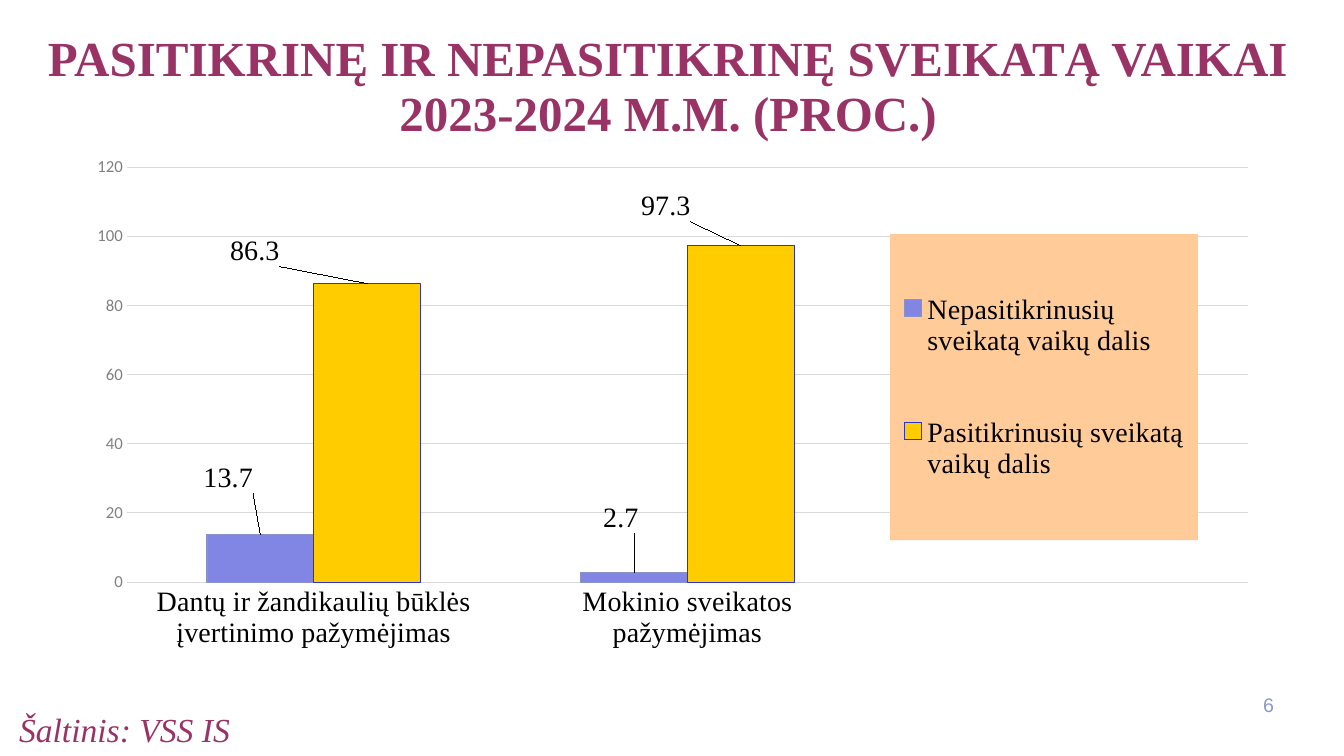
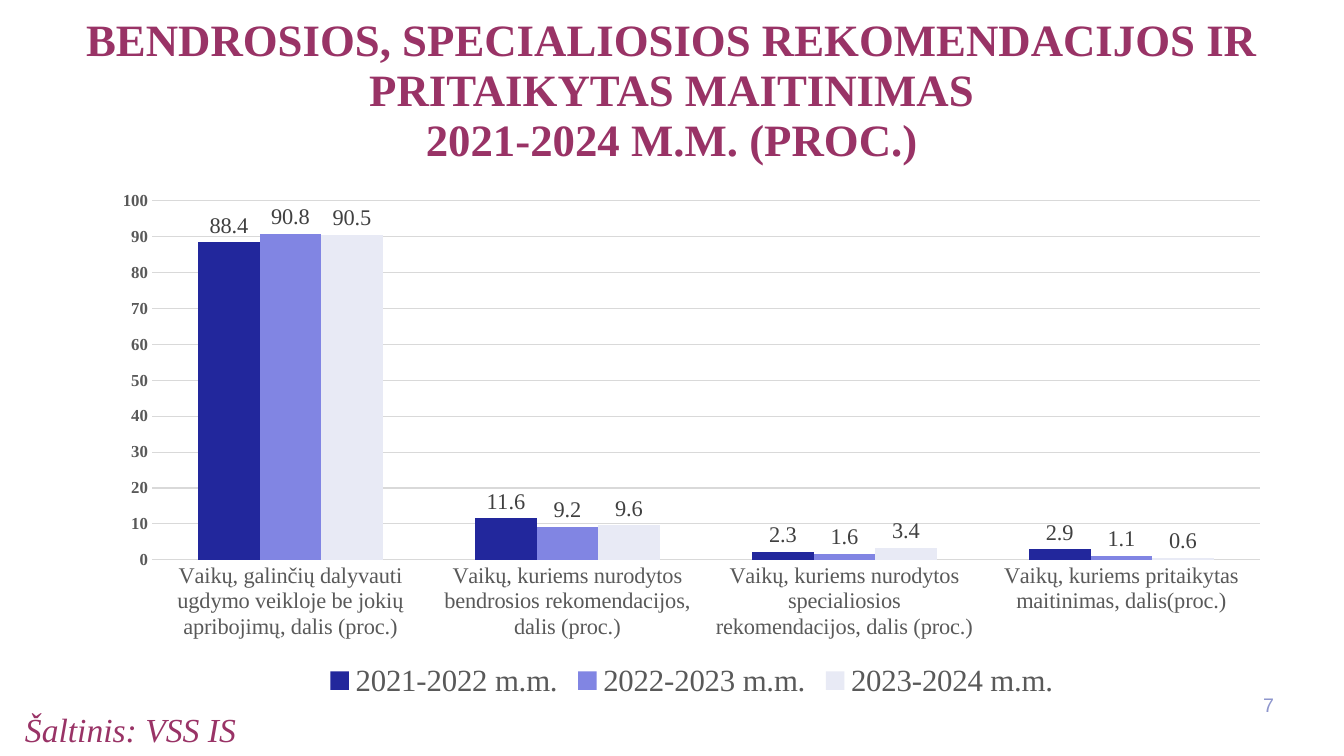
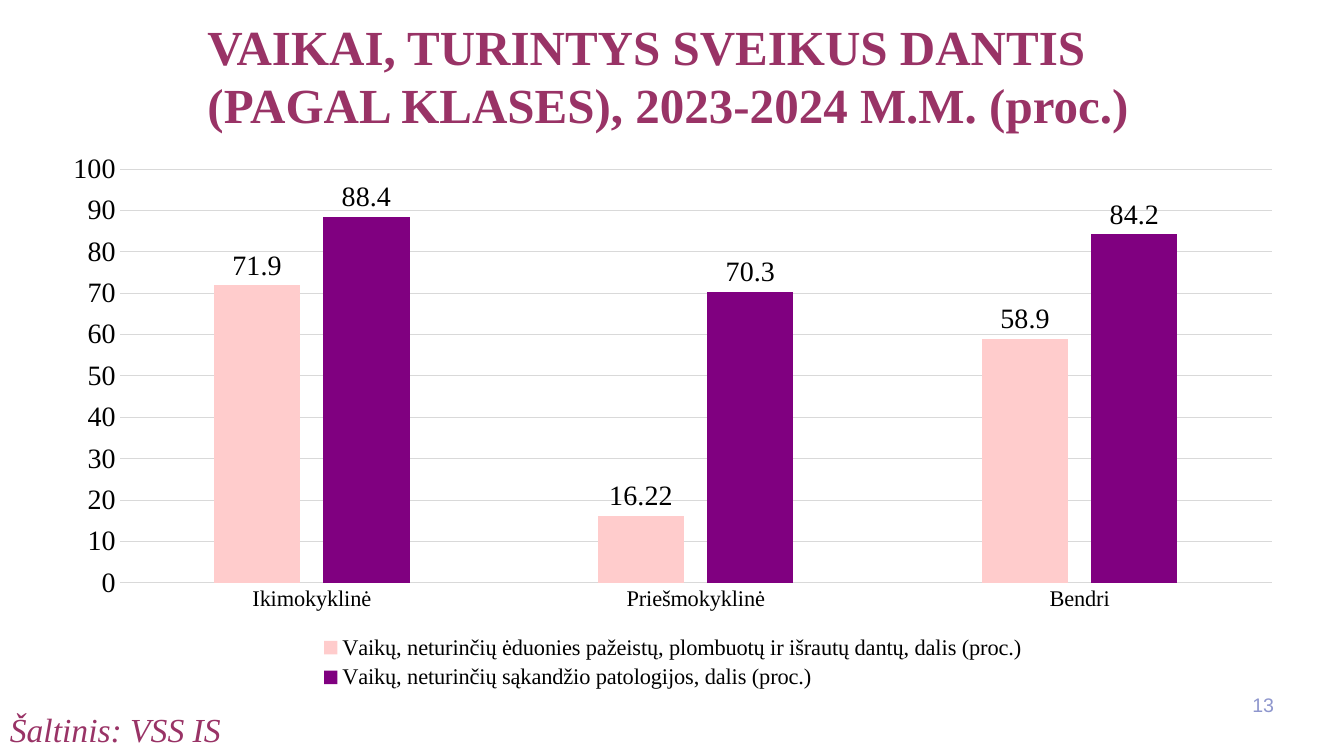
from dataclasses import dataclass

from pptx import Presentation
from pptx.chart.data import CategoryChartData
from pptx.dml.color import RGBColor
from pptx.enum.chart import XL_CHART_TYPE, XL_LABEL_POSITION, XL_LEGEND_POSITION, XL_TICK_MARK
from pptx.enum.text import MSO_ANCHOR, PP_ALIGN
from pptx.oxml import parse_xml
from pptx.oxml.ns import nsdecls
from pptx.util import Cm, Pt

COLUMN = XL_CHART_TYPE.COLUMN_CLUSTERED
OUTSIDE = XL_LABEL_POSITION.OUTSIDE_END
BOTTOM = XL_LEGEND_POSITION.BOTTOM
NO_TICK = XL_TICK_MARK.NONE
TOP, MIDDLE = MSO_ANCHOR.TOP, MSO_ANCHOR.MIDDLE
LEFT, CENTER, RIGHT = PP_ALIGN.LEFT, PP_ALIGN.CENTER, PP_ALIGN.RIGHT


@dataclass
class Theme:
    serif: str = "Times New Roman"
    sans: str = "Arial"
    plain: str = "Calibri"
    plum: str = "993366"
    number: str = "8E96CD"
    grid: str = "D9D9D9"
    black: str = "000000"
    dark: str = "404040"
    gray: str = "595959"
    pale: str = "808080"
    navy: str = "22279C"
    blue: str = "8185E3"
    mist: str = "E8EAF5"
    gold: str = "FFCC00"
    pink: str = "FFCCCC"
    purple: str = "800080"
    peach: str = "FFCC99"
    big: int = 35
    head: int = 32
    note: int = 24
    key: int = 22
    large: int = 20
    mid: int = 16
    page: int = 14
    small: int = 12


theme = Theme()


def style(font, size, color, name=theme.serif, bold=False, italic=False):
    font.size, font.name, font.bold, font.italic = Pt(size), name, bold, italic
    font.color.rgb = RGBColor.from_string(color)


def layout(frame, box, target=""):
    x, y, w, h = frame
    if len(box) == 2:
        parts = [("x", box[0] / w), ("y", box[1] / h)]
    else:
        parts = [("xMode", "edge"), ("yMode", "edge"),
                 ("x", (box[0] - x) / w), ("y", (box[1] - y) / h),
                 ("w", box[2] / w), ("h", box[3] / h)]
    if target:
        parts.insert(0, ("layoutTarget", target))
    body = "".join(f'<c:{tag} val="{val}"/>' for tag, val in parts)
    return parse_xml(f'<c:layout {nsdecls("c")}><c:manualLayout>{body}</c:manualLayout></c:layout>')


pages = [
    dict(
        title="PASITIKRINĘ IR NEPASITIKRINĘ SVEIKATĄ VAIKAI 2023-2024 M.M. (PROC.)",
        head=(-0.3, 0.71, 34.29, 3.51), size=theme.big, align=CENTER, pitch=0.93,
        note=(0.23, 17.73, 16, 0.97), page="6",
        frame=(1.83, 3.66, 30.23, 15.06), plot=(3.2, 4.21, 28.25, 10.46),
        cats=["Dantų ir žandikaulių būklės įvertinimo pažymėjimas",
              "Mokinio sveikatos pažymėjimas", ""],
        series=[("Nepasitikrinusių sveikatą vaikų dalis", [13.7, 2.7, None], theme.blue, "8A92C8"),
                ("Pasitikrinusių sveikatą vaikų dalis", [86.3, 97.3, None], theme.gold, "2D33CB")],
        top=120, step=20, gap=150, lap=0, base=None,
        cat=(theme.large, theme.black), val=(theme.small, theme.pale, theme.plain),
        label=(theme.large, theme.black), key=(theme.large, theme.black),
        panel=(22.43, 5.9, 7.76, 7.71),
        shifts=[[(-0.81, -0.93), (-0.33, -0.88)], [(-2.83, -0.33), (-1.89, -0.5)]],
    ),
    dict(
        title="BENDROSIOS, SPECIALIOSIOS REKOMENDACIJOS IR PRITAIKYTAS MAITINIMAS\v2021-2024 M.M. (PROC.)",
        head=(-0.28, 0.28, 34.42, 3.51), size=theme.head, align=CENTER, pitch=0.93,
        note=(0.38, 17.73, 16, 0.97), page="7",
        frame=(2.51, 4.57, 29.85, 13.16), plot=(3.83, 5.06, 27.92, 9.05),
        cats=["Vaikų, galinčių dalyvauti ugdymo veikloje be jokių apribojimų, dalis (proc.)",
              "Vaikų, kuriems nurodytos bendrosios rekomendacijos, dalis (proc.)",
              "Vaikų, kuriems nurodytos specialiosios rekomendacijos, dalis (proc.)",
              "Vaikų, kuriems pritaikytas maitinimas, dalis(proc.)"],
        series=[("2021-2022 m.m.", [88.4, 11.6, 2.3, 2.9], theme.navy, None),
                ("2022-2023 m.m.", [90.8, 9.2, 1.6, 1.1], theme.blue, None),
                ("2023-2024 m.m.", [90.5, 9.6, 3.4, 0.6], theme.mist, None)],
        top=100, step=10, gap=150, lap=0, base=theme.grid,
        cat=(theme.mid, theme.gray), val=(theme.small, theme.gray, theme.serif, True),
        label=(theme.mid, theme.dark), key=(theme.key, theme.gray),
        panel=None, shifts=[],
    ),
    dict(
        title="VAIKAI, TURINTYS SVEIKUS DANTIS (PAGAL KLASES), 2023-2024 M.M. (proc.)",
        head=(4.98, 0.28, 24.84, 3.25), size=theme.big, align=LEFT, pitch=1.0,
        note=(0, 17.75, 16.94, 1.27), page="13",
        frame=(1.22, 3.58, 31.47, 13.92), plot=(3.02, 4.26, 29.03, 10.43),
        cats=["Ikimokyklinė", "Priešmokyklinė", "Bendri"],
        series=[("Vaikų, neturinčių ėduonies pažeistų, plombuotų ir išrautų dantų, dalis (proc.)",
                 [71.9, 16.22, 58.9], theme.pink, None),
                ("Vaikų, neturinčių sąkandžio patologijos, dalis (proc.)",
                 [88.4, 70.3, 84.2], theme.purple, None)],
        top=100, step=10, gap=219, lap=-27, base=theme.grid,
        cat=(theme.mid, theme.black), val=(theme.large, theme.black),
        label=(theme.large, theme.black), key=(theme.mid, theme.black),
        panel=None, shifts=[],
    ),
]

deck = Presentation()
deck.slide_width, deck.slide_height = Cm(33.87), Cm(19.05)

for page in pages:
    slide = deck.slides.add_slide(deck.slide_layouts[6])
    frame = page["frame"]

    data = CategoryChartData()
    data.categories = page["cats"]
    for name, vals, fill, edge in page["series"]:
        data.add_series(name, vals)
    chart = slide.shapes.add_chart(COLUMN, *map(Cm, frame), data).chart
    style(chart.font, 10, theme.black, theme.plain)
    chart.has_title = False
    area = chart.element.xpath(".//c:plotArea")[0]
    for old in area.xpath("./c:layout"):
        area.remove(old)
    area.insert(0, layout(frame, page["plot"], "inner"))

    for axis, font in ((chart.category_axis, page["cat"]), (chart.value_axis, page["val"])):
        axis.major_tick_mark = axis.minor_tick_mark = NO_TICK
        style(axis.tick_labels.font, *font)
        axis.format.line.fill.background()
    if page["base"]:
        line = chart.category_axis.format.line
        line.color.rgb, line.width = RGBColor.from_string(page["base"]), Pt(0.75)
    axis = chart.value_axis
    axis.minimum_scale, axis.maximum_scale, axis.major_unit = 0, page["top"], page["step"]
    axis.has_major_gridlines = True
    line = axis.major_gridlines.format.line
    line.color.rgb, line.width = RGBColor.from_string(theme.grid), Pt(0.75)

    bars = chart.plots[0]
    bars.gap_width, bars.overlap, bars.vary_by_categories = page["gap"], page["lap"], False
    for row, (name, vals, fill, edge) in zip(bars.series, page["series"]):
        row.format.fill.solid()
        row.format.fill.fore_color.rgb = RGBColor.from_string(fill)
        if edge:
            row.format.line.color.rgb = RGBColor.from_string(edge)
            row.format.line.width = Pt(0.75)
        labels = row.data_labels
        labels.show_value, labels.position = True, OUTSIDE
        style(labels.font, *page["label"])
    for row, shifts in zip(bars.series, page["shifts"]):
        for spot, shift in enumerate(shifts):
            label = row.points[spot].data_label
            style(label.font, *page["label"])
            label.position = OUTSIDE
            node = row.data_labels._element.xpath(f"./c:dLbl[c:idx/@val='{spot}']")[0]
            node.insert(1, layout(frame, shift))

    chart.has_legend = True
    legend = chart.legend
    legend.position, legend.include_in_layout = BOTTOM, False
    style(legend.font, *page["key"])
    if page["panel"]:
        over = chart.element.xpath(".//c:legend/c:overlay")[0]
        over.addprevious(layout(frame, page["panel"]))
        over.addnext(parse_xml(
            f'<c:spPr {nsdecls("c", "a")}><a:solidFill><a:srgbClr val="{theme.peach}"/>'
            '</a:solidFill></c:spPr>'))

    texts = [
        (page["head"], page["title"], page["align"], TOP, page["pitch"],
         (page["size"], theme.plum, theme.serif, True)),
        (page["note"], "Šaltinis: VSS IS", LEFT, TOP, 1.0,
         (theme.note, theme.plum, theme.serif, False, True)),
        ((31.04, 17.25, 1.32, 1.02), page["page"], RIGHT, MIDDLE, 1.0,
         (theme.page, theme.number, theme.sans)),
    ]
    for box, words, align, anchor, pitch, font in texts:
        body = slide.shapes.add_textbox(*map(Cm, box)).text_frame
        body.word_wrap, body.vertical_anchor = True, anchor
        body.text = words
        para = body.paragraphs[0]
        para.alignment, para.line_spacing = align, pitch
        style(para.font, *font)

deck.save("out.pptx")
